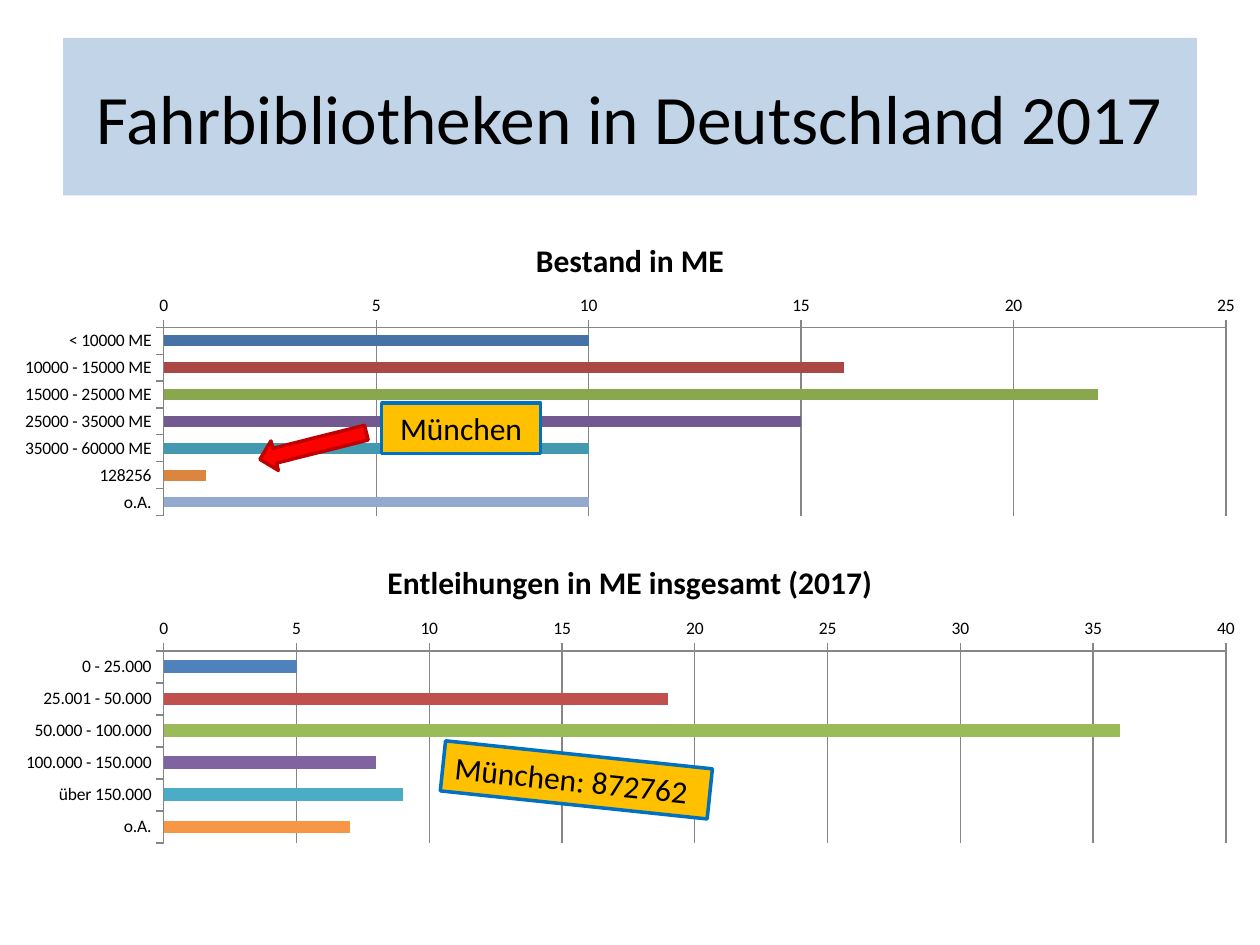
from pptx import Presentation
from pptx.chart.data import CategoryChartData
from pptx.dml.color import RGBColor
from pptx.enum.chart import XL_CHART_TYPE, XL_TICK_MARK
from pptx.enum.shapes import MSO_SHAPE
from pptx.enum.text import MSO_ANCHOR, PP_ALIGN
from pptx.oxml import parse_xml
from pptx.oxml.ns import nsdecls
from pptx.util import Inches, Pt

WIDE, HIGH = 10, 7.5
FONT = "Calibri"
DEEP = ["4672A8", "AB4744", "8AA64F", "725990", "4299B0", "DC853E", "93A9CF"]
LIGHT = ["4F81BD", "C0504D", "9BBB59", "8064A2", "4BACC6", "F79646"]
STOCK = [("< 10000 ME", 10), ("10000 - 15000 ME", 16),
         ("15000 - 25000 ME", 22), ("25000 - 35000 ME", 15),
         ("35000 - 60000 ME", 10), ("128256", 1), ("o.A.", 10)]
LOANS = [("0 - 25.000", 5), ("25.001 - 50.000", 19), ("50.000 - 100.000", 36),
         ("100.000 - 150.000", 8), ("über 150.000", 9), ("o.A.", 7)]


def paint(fmt, code):
    fmt.solid()
    fmt.fore_color.rgb = RGBColor.from_string(code)


def style(font, size, bold=False):
    font.name, font.size, font.bold = FONT, Pt(size), bold
    font.color.rgb = RGBColor.from_string("000000")


def write(frame, text, size, align):
    frame.vertical_anchor = MSO_ANCHOR.MIDDLE
    para = frame.paragraphs[0]
    para.alignment = align
    run = para.add_run()
    run.text = text
    style(run.font, size)


def head(slide, box, text):
    title = slide.shapes.title
    title.left, title.top, title.width, title.height = map(Inches, box)
    paint(title.fill, "4F81BD")
    tint = title.fill._xPr.solidFill[0]
    tint.append(parse_xml(f'<a:alpha {nsdecls("a")} val="34000"/>'))
    title.text_frame.word_wrap = True
    write(title.text_frame, text, 39.6, PP_ALIGN.CENTER)


def place(chart, left, top, width, height):
    parts = zip("xywh", (left, top, width, height))
    vals = "".join(f'<c:{key} val="{val}"/>' for key, val in parts)
    area = chart._chartSpace.chart.plotArea
    for old in area.findall(area.tag.replace("plotArea", "layout")):
        area.remove(old)
    area.insert(0, parse_xml(
        f'<c:layout {nsdecls("c")}><c:manualLayout><c:layoutTarget val="inner"/>'
        f'<c:xMode val="edge"/><c:yMode val="edge"/>{vals}'
        '</c:manualLayout></c:layout>'))


def bars(slide, box, text, rows, tones, top, step):
    data = CategoryChartData()
    data.categories = [name for name, _ in rows]
    data.add_series("Series 1", [val for _, val in rows])
    chart = slide.shapes.add_chart(
        XL_CHART_TYPE.BAR_CLUSTERED, *map(Inches, box), data).chart
    style(chart.font, 10)
    chart.has_legend = False
    chart.has_title = True
    run = chart.chart_title.text_frame.paragraphs[0].add_run()
    run.text = text
    style(run.font, 18, True)
    plot = chart.plots[0]
    plot.gap_width = 150
    plot.vary_by_categories = True
    for spot, tone in enumerate(tones):
        paint(plot.series[0].points[spot].format.fill, tone)
    cats, vals = chart.category_axis, chart.value_axis
    cats.reverse_order = True
    vals.minimum_scale, vals.maximum_scale, vals.major_unit = 0, top, step
    vals.has_major_gridlines = True
    for axis in (cats, vals):
        axis.major_tick_mark = XL_TICK_MARK.OUTSIDE
    for line in (cats.format.line, vals.format.line,
                 vals.major_gridlines.format.line):
        paint(line.fill, "868686")
        line.width = Pt(0.75)
    place(chart, 0.13, 0.355, 0.843, 0.625)


def block(slide, kind, box, turn, fill, edge):
    shape = slide.shapes.add_shape(kind, *map(Inches, box))
    shape.shadow.inherit = False
    shape.rotation = turn
    paint(shape.fill, fill)
    paint(shape.line.fill, edge)
    shape.line.width = Pt(2)
    return shape


def label(slide, box, text, turn=0, align=PP_ALIGN.CENTER):
    shape = block(slide, MSO_SHAPE.RECTANGLE, box, turn, "FFC000", "0070C0")
    shape.text_frame.word_wrap = True
    write(shape.text_frame, text, 18, align)


def main():
    deck = Presentation()
    deck.slide_width, deck.slide_height = Inches(WIDE), Inches(HIGH)
    slide = deck.slides.add_slide(deck.slide_layouts[5])
    head(slide, (WIDE * 0.05, HIGH * 0.04, WIDE * 0.9, HIGH / 6),
         "Fahrbibliotheken in Deutschland 2017")
    bars(slide, (0, 1.75, WIDE, 2.39), "Bestand in ME", STOCK, DEEP, 25, 5)
    bars(slide, (0, 4.3, WIDE, 2.44), "Entleihungen in ME insgesamt (2017)",
         LOANS, LIGHT, 40, 5)
    block(slide, MSO_SHAPE.RIGHT_ARROW, (2.05, 3.42, 0.87, 0.24), 165.9,
          "FF0000", "C00000")
    label(slide, (3.03, 3.2, 1.26, 0.4), "München")
    label(slide, (3.51, 5.99, 2.13, 0.4), "München: 872762", 6, PP_ALIGN.LEFT)
    deck.save("out.pptx")


if __name__ == "__main__":
    main()
